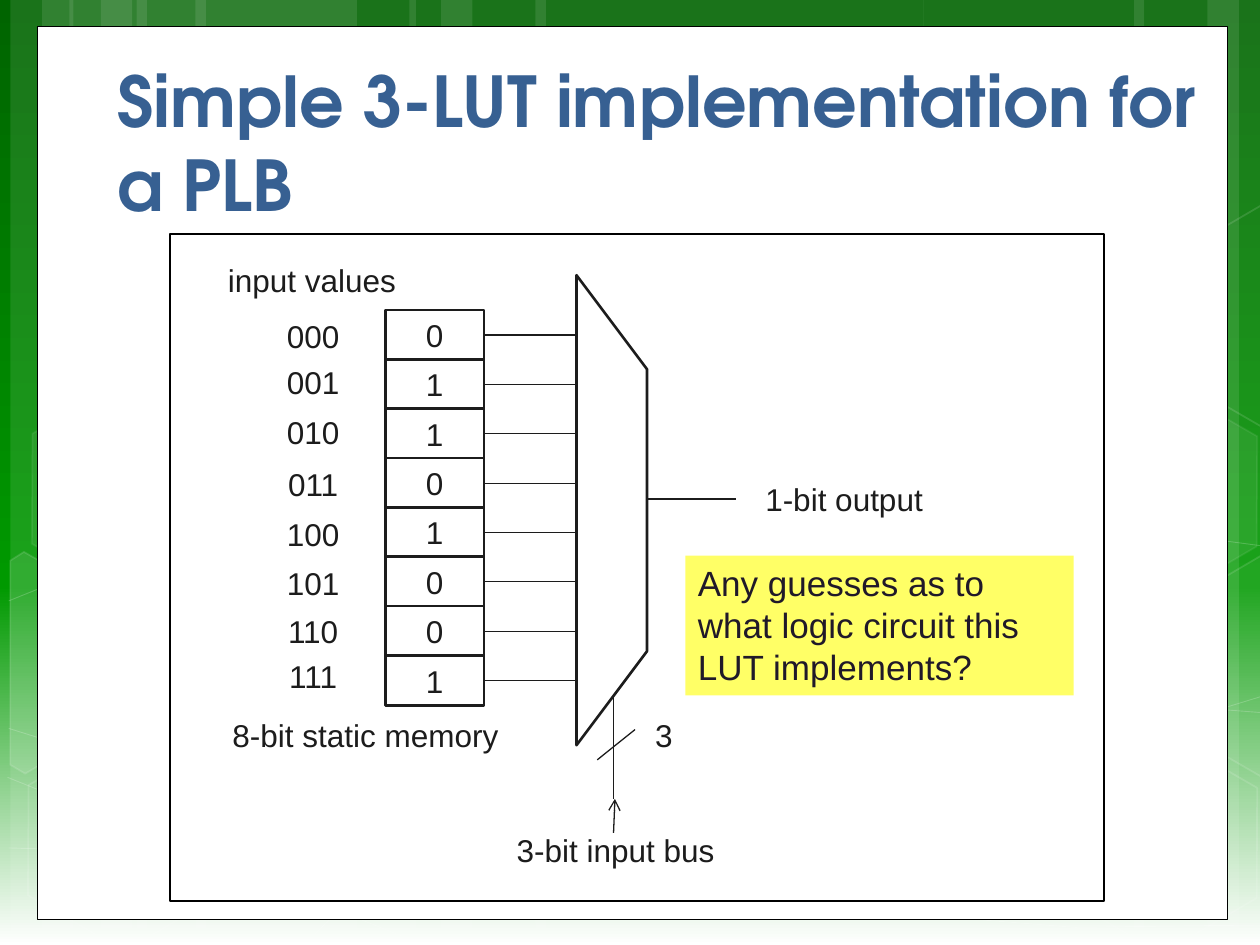
import copy
from dataclasses import dataclass

import lxml.etree
import pptx
import pptx.dml.color
import pptx.enum.shapes
import pptx.enum.text
import pptx.oxml.ns
import pptx.util

Pt = pptx.util.Pt
qn = pptx.oxml.ns.qn
SHAPE = pptx.enum.shapes.MSO_SHAPE
ALIGN = pptx.enum.text.PP_ALIGN
ANCHOR = pptx.enum.text.MSO_ANCHOR

COLORS = {"dark green": "006400", "green": "009900", "white": "FFFFFF", "black": "000000",
          "title": "376092", "ink": "1C1C1C", "callout": "FFFF66", "callout ink": "201929"}


@dataclass
class Box:
    left: float
    top: float
    width: float
    height: float


@dataclass
class Font:
    size: float = 18
    color: str = "ink"
    name: str = "Arial"
    bold: bool = False


@dataclass
class Label:
    text: str
    box: Box


def rgb(color: str):
    return pptx.dml.color.RGBColor.from_string(COLORS[color])


def set_alpha(fill_parent, percent: float):
    color = fill_parent.find(qn("a:solidFill")).find(qn("a:srgbClr"))
    lxml.etree.SubElement(color, qn("a:alpha"), val=str(int(percent * 1000)))


def style(shape, fill=None, line=None, weight=1.0, fill_alpha=None, line_alpha=None):
    shape.shadow.inherit = False
    properties = shape.element.spPr
    if fill:
        shape.fill.solid()
        shape.fill.fore_color.rgb = rgb(fill)
        if fill_alpha:
            set_alpha(properties, fill_alpha)
    else:
        shape.fill.background()
    if line:
        shape.line.color.rgb = rgb(line)
        shape.line.width = Pt(weight)
        if line_alpha:
            set_alpha(properties.find(qn("a:ln")), line_alpha)
    else:
        shape.line.fill.background()


def add_box(slide, box: Box, kind=SHAPE.RECTANGLE, **look):
    shape = slide.shapes.add_shape(kind, Pt(box.left), Pt(box.top), Pt(box.width), Pt(box.height))
    style(shape, **look)
    return shape


def add_outline(slide, points: list, closed: bool, **look):
    builder = slide.shapes.build_freeform(Pt(points[0][0]), Pt(points[0][1]))
    builder.add_line_segments([(Pt(x), Pt(y)) for x, y in points[1:]], close=closed)
    style(builder.convert_to_shape(), line="white", **look)


def write(shape, text: str, font: Font, align=ALIGN.CENTER, anchor=ANCHOR.TOP, wrap=True):
    frame = shape.text_frame
    frame.word_wrap = wrap
    frame.vertical_anchor = anchor
    paragraph = frame.paragraphs[0]
    paragraph.alignment = align
    run = paragraph.add_run()
    run.text = text
    run.font.size = Pt(font.size)
    run.font.name = font.name
    run.font.bold = font.bold
    run.font.color.rgb = rgb(font.color)


def add_label(slide, label: Label, font: Font, **layout):
    box = label.box
    holder = slide.shapes.add_textbox(Pt(box.left), Pt(box.top), Pt(box.width), Pt(box.height))
    write(holder, label.text, font, **layout)


def add_wire(slide, start: tuple, end: tuple, arrow: bool = False):
    wire = slide.shapes.add_connector(pptx.enum.shapes.MSO_CONNECTOR.STRAIGHT,
                                      Pt(start[0]), Pt(start[1]), Pt(end[0]), Pt(end[1]))
    wire.line.color.rgb = rgb("ink")
    wire.line.width = Pt(0.75)
    properties = wire.element.spPr
    if arrow:
        lxml.etree.SubElement(properties.find(qn("a:ln")), qn("a:tailEnd"), type="arrow")
    lxml.etree.SubElement(properties, qn("a:effectLst"))
    return wire


def paint_background(slide):
    fill = slide.background.fill
    fill.gradient()
    fill.gradient_angle = 270
    stop_list = next(slide.element.iter(qn("a:gsLst")))
    stop_list.append(copy.deepcopy(stop_list[-1]))
    stops = ((0, "dark green"), (0.62, "green"), (1, "white"))
    for stop, (position, color) in zip(fill.gradient_stops, stops):
        stop.position = position
        stop.color.rgb = rgb(color)


# Translucent vertical bands: left, width
BANDS = [(78, 126), (6, 36), (24, 60), (111.6, 126), (39.6, 36), (57.6, 60),
         (527.8, 126), (690, 36), (648, 60), (306, 222), (234, 36), (252, 60)]

# Faint sweeping lines
SWEEPS = [
    [(5, 484.6), (136.8, 488.2), (329.8, 478.8), (570.2, 444.2), (725, 396.7)],
    [(5, 343.4), (87.1, 310.3), (249.8, 278.6), (470.9, 278.6), (725, 312.5)],
    [(4.3, 444.2), (240.5, 539.3)],
    [(5, 416.2), (92.2, 443.5), (257, 484.6), (452.2, 517), (614.2, 529.9), (725, 528.5)],
    [(174.2, 539.3), (217.4, 497.5), (279.4, 460.1), (338.4, 438.5), (437.8, 416.2),
     (489.6, 409.7), (571.7, 404.6), (686.2, 404.6), (724.3, 407.5)],
]

# Hexagons at the edges: left, top, fill alpha, line alpha
HEXAGONS = [(7.9, 425.5, None, 12), (10.1, 224.6, 7, 8),
            (600.5, 427, None, 12), (600.5, 226.1, 7, 8)]

# Hexagons cut by the slide edge: points, fill alpha
CUT_HEXAGONS = [
    ([(5.8, 320.4), (13.7, 315.4), (69.1, 347), (68.4, 410.4), (14.4, 442.1), (5.8, 437)], 10),
    ([(666.7, 349.2), (720.7, 317.5), (726.5, 321.1), (726.5, 441.4), (721.4, 444.2),
      (666.7, 412.6)], 4),
    ([(666.7, 149), (720.7, 117.4), (727.2, 121), (726.5, 241.2), (721.4, 244.1),
      (666.7, 212.4)], None),
]

# Look-up table rows: address, top of address label, stored bit
ROWS = [("000", 177.8, "0"), ("001", 203.8, "1"), ("010", 232.6, "1"), ("011", 262.1, "0"),
        ("100", 290.9, "1"), ("101", 319, "0"), ("110", 346.3, "0"), ("111", 372.2, "1")]
CELL = Box(220.3, 177.1, 56.2, 28.8)
ROW_PITCH = 28.2
MUX_LEFT = 329

LABELS = [Label("8-bit static memory", Box(124.6, 405.4, 168.5, 28.8)),
          Label("3", Box(367.2, 405.4, 24.5, 28.8)),
          Label("3-bit input bus", Box(287.3, 471.6, 128.9, 28.8)),
          Label("1-bit output", Box(429.8, 270.7, 105.1, 28.8)),
          Label("input values", Box(122.4, 145.4, 111.6, 28.8))]


def draw_backdrop(slide):
    paint_background(slide)
    for left, width in BANDS:
        add_box(slide, Box(left, 0, width, 540), fill="white", fill_alpha=10)
    for points in SWEEPS:
        add_outline(slide, points, closed=False, weight=0.5, line_alpha=20)
    for left, top, fill_alpha, line_alpha in HEXAGONS:
        hexagon = add_box(slide, Box(left, top, 126, 109.4), SHAPE.HEXAGON,
                          fill="white" if fill_alpha else None, fill_alpha=fill_alpha,
                          line="white", line_alpha=line_alpha)
        hexagon.adjustments[0] = 0.285
        hexagon.rotation = 30
    for points, fill_alpha in CUT_HEXAGONS:
        add_outline(slide, points, closed=True, fill="white" if fill_alpha else None,
                    fill_alpha=fill_alpha, line_alpha=12)
    add_box(slide, Box(21.6, 15.1, 679.7, 510.5), fill="white", line="black", weight=0.5)


def draw_lookup_table(slide):
    mux = add_box(slide, Box(215.3, 271.4, 268.6, 40.3), SHAPE.FLOWCHART_MANUAL_OPERATION,
                  fill="white", line="ink", weight=1.5)
    mux.rotation = 270
    for index, (address, address_top, bit) in enumerate(ROWS):
        top = CELL.top + index * ROW_PITCH
        cell = add_box(slide, Box(CELL.left, top, CELL.width, CELL.height),
                       fill="white", line="ink", weight=1.5)
        write(cell, bit, Font())
        middle = top + CELL.height / 2
        lead = add_wire(slide, (MUX_LEFT, middle), (CELL.left + CELL.width, middle))
        lead.end_connect(cell, 3)
        add_label(slide, Label(address, Box(150.5, address_top, 56.9, 28.8)), Font())


def main():
    deck = pptx.Presentation()
    deck.slide_width, deck.slide_height = Pt(720), Pt(540)
    slide = deck.slides.add_slide(deck.slide_layouts[6])
    draw_backdrop(slide)

    # Diagram frame and title
    add_box(slide, Box(97.2, 133.9, 533.5, 380.9), fill="white", line="black", weight=1.25)
    add_label(slide, Label("Simple 3-LUT implementation for a PLB", Box(59.8, 19.4, 660.2, 113)),
              Font(40, "title", "TeX Gyre Adventor", True), align=ALIGN.LEFT, anchor=ANCHOR.BOTTOM)

    draw_lookup_table(slide)

    # Output, select bus, bus-width slash and bus arrow
    add_wire(slide, (420.5, 285.1), (369.4, 285.1))
    add_wire(slide, (350.6, 456.5), (350.6, 398.2))
    add_wire(slide, (362.9, 416.9), (341.3, 434.2))
    add_wire(slide, (350.6, 475.9), (351.4, 456.5), arrow=True)
    for label in LABELS:
        add_label(slide, label, Font(), wrap=False)

    # Question
    question = add_box(slide, Box(391.7, 317.5, 221.8, 79.9), fill="callout")
    write(question, "Any guesses as to what logic circuit this LUT implements?",
          Font(20, "callout ink"), align=ALIGN.LEFT)
    deck.save("out.pptx")


if __name__ == "__main__":
    main()
